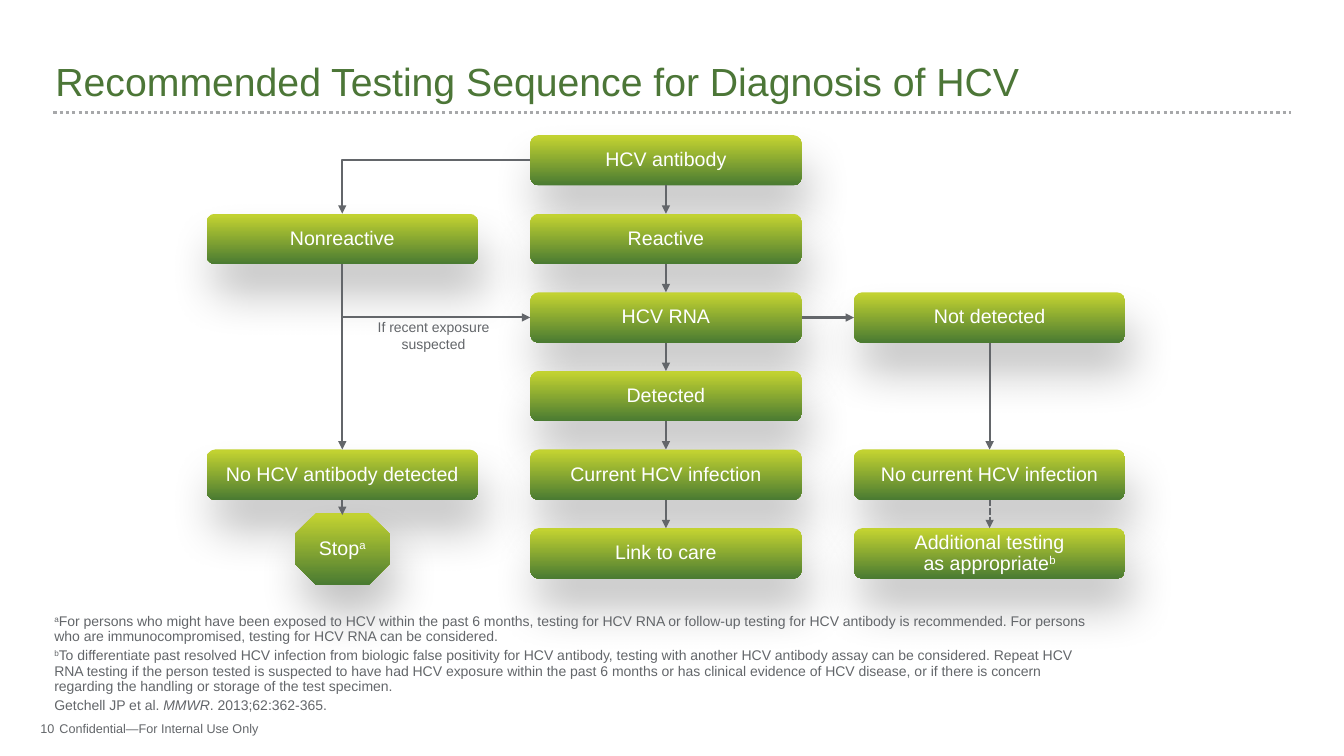
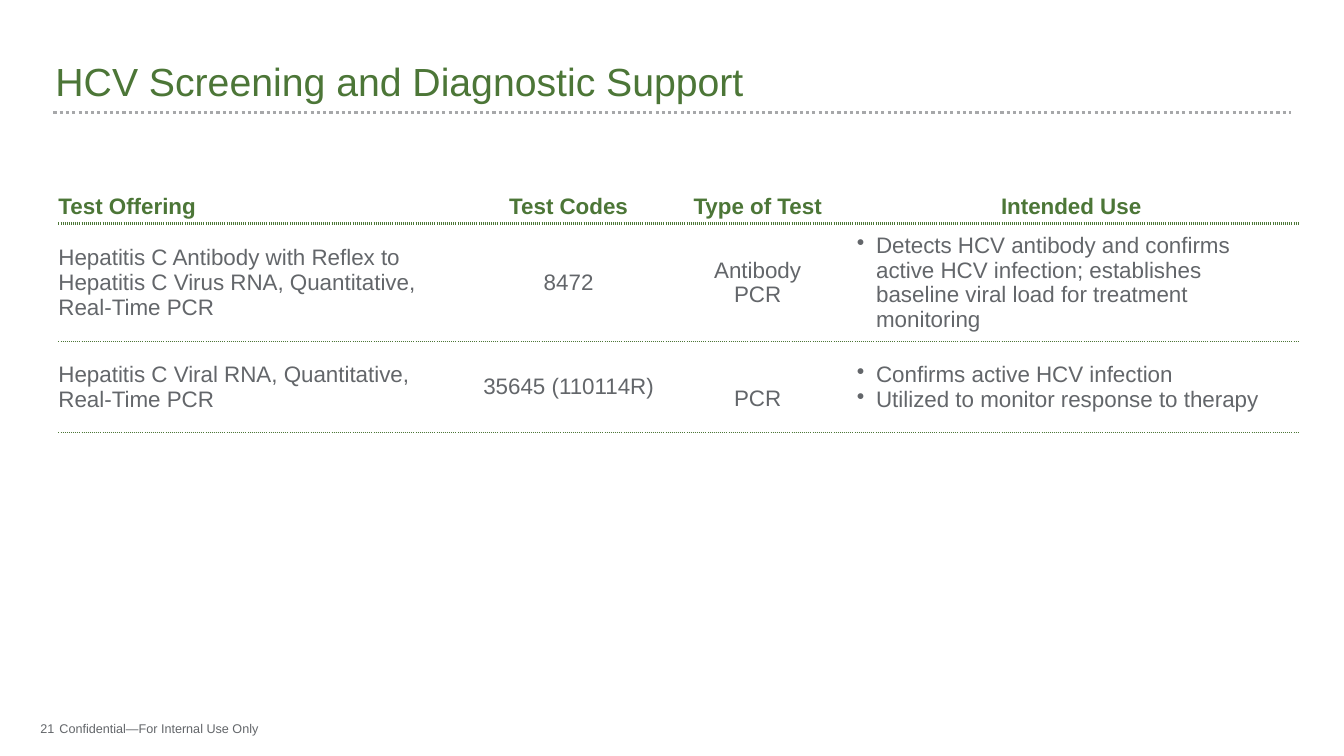
import lxml.etree
import pptx
import pptx.dml.color
import pptx.enum.dml
import pptx.enum.shapes
import pptx.enum.text
import pptx.oxml.ns
import pptx.util

Inches, Pt = pptx.util.Inches, pptx.util.Pt
SHAPE = pptx.enum.shapes.MSO_SHAPE
CONNECTOR = pptx.enum.shapes.MSO_CONNECTOR
DASH = pptx.enum.dml.MSO_LINE
ALIGN = pptx.enum.text.PP_ALIGN
ANCHOR = pptx.enum.text.MSO_ANCHOR
rgb = pptx.dml.color.RGBColor.from_string
qn = pptx.oxml.ns.qn

FONT = "Arial"
GREEN, LIME, LEAF = "4C7637", "C2D231", "4A7B32"
GREY, RULE, WHITE = "63666A", "A7A8AA", "FFFFFF"


def add_runs(p, runs, size, color, bold=False):
    """Fill p from (text, style) pairs; style is "", "sup" or "italic", and a newline breaks the line."""
    for text, style in runs:
        for i, line in enumerate(text.split("\n")):
            if i:
                p.add_line_break()
            r = p.add_run()
            r.text = line
            r.font.name, r.font.size, r.font.bold = FONT, Pt(size), bold
            r.font.color.rgb = rgb(color)
            if style == "italic":
                r.font.italic = True
            elif style == "sup":
                r._r.get_or_add_rPr().set("baseline", "30000")


def add_line(s, kind, ends, color, width, dash=None, arrow=None):
    """Draw a connector between ends; arrow is "headEnd" or "tailEnd"."""
    line = s.shapes.add_connector(kind, *map(Inches, ends))
    line.line.color.rgb = rgb(color)
    line.line.width = Pt(width)
    if dash:
        line.line.dash_style = dash
    if arrow:
        ln = line._element.spPr.find(qn("a:ln"))
        lxml.etree.SubElement(ln, qn("a:" + arrow), type="triangle")
    lxml.etree.SubElement(line._element.spPr, qn("a:effectLst"))
    return line


prs = pptx.Presentation()
prs.slide_width, prs.slide_height = Inches(13.33), Inches(7.5)

# Title, dotted rule and footer of every slide
slides = []
for title, number in [("Recommended Testing Sequence for Diagnosis of HCV", "10"),
                      ("HCV Screening and Diagnostic Support", "21")]:
    s = prs.slides.add_slide(prs.slide_layouts[5])
    slides.append(s)
    sp = s.shapes.title
    sp.left, sp.top, sp.width, sp.height = map(Inches, (0.45, 0.13, 12.43, 0.96))
    tf = sp.text_frame
    tf.auto_size = pptx.enum.text.MSO_AUTO_SIZE.NONE
    tf.word_wrap, tf.vertical_anchor = True, ANCHOR.BOTTOM
    p = tf.paragraphs[0]
    p.alignment, p.line_spacing = ALIGN.LEFT, 0.9
    add_runs(p, [(title, "")], 28, GREEN)
    add_line(s, CONNECTOR.STRAIGHT, (0.53, 1.12, 12.8, 1.12), RULE, 2.25, DASH.ROUND_DOT)
    for left, width, align, text in [(0.07, 0.47, ALIGN.RIGHT, number),
                                     (0.59, 6.96, ALIGN.LEFT, "Confidential—For Internal Use Only")]:
        tf = s.shapes.add_textbox(*map(Inches, (left, 7.15, width, 0.15))).text_frame
        tf.margin_left = tf.margin_right = tf.margin_top = tf.margin_bottom = 0
        tf.word_wrap, tf.vertical_anchor = True, ANCHOR.BOTTOM
        p = tf.paragraphs[0]
        p.alignment, p.line_spacing = align, 0.9
        add_runs(p, [(text, "")], 9, GREY)

# Flowchart: three columns, six rows
s = slides[0]
LEFT, TOP, COL, ROW = 2.05, 1.34, 3.21, 0.78
BOX_W, BOX_H = 2.69, 0.5
STOP_W, STOP_H, STOP_TOP = 0.94, 0.71, 5.09
steps = {
    (1, 0): [("HCV antibody", "")],
    (0, 1): [("Nonreactive", "")],
    (1, 1): [("Reactive", "")],
    (1, 2): [("HCV RNA", "")],
    (2, 2): [("Not detected", "")],
    (1, 3): [("Detected", "")],
    (0, 4): [("No HCV antibody detected", "")],
    (1, 4): [("Current HCV infection", "")],
    (2, 4): [("No current HCV infection", "")],
    (2, 5): [("Additional testing\nas appropriate", ""), ("b", "sup")],
    (1, 5): [("Link to care", "")],
    "stop": [("Stop", ""), ("a", "sup")],
}
nodes = {}
for key, runs in steps.items():
    if key == "stop":
        kind = SHAPE.OCTAGON
        place = (LEFT + (BOX_W - STOP_W) / 2, STOP_TOP, STOP_W, STOP_H)
    else:
        kind = SHAPE.ROUNDED_RECTANGLE
        place = (LEFT + key[0] * COL, TOP + key[1] * ROW, BOX_W, BOX_H)
    sp = nodes[key] = s.shapes.add_shape(kind, *map(Inches, place))
    sp.fill.gradient()
    sp.fill.gradient_angle = 270
    for stop, position, color in zip(sp.fill.gradient_stops, (0.03, 1), (LIME, LEAF)):
        stop.position, stop.color.rgb = position, rgb(color)
    sp.line.fill.background()
    sp.shadow.inherit = False
    shadow = lxml.etree.SubElement(
        sp._element.spPr.find(qn("a:effectLst")), qn("a:outerShdw"), blurRad=str(Pt(33)),
        dist=str(Pt(22)), dir=str(77 * 60000), algn="ctr", rotWithShape="0")
    black = lxml.etree.SubElement(shadow, qn("a:srgbClr"), val="000000")
    lxml.etree.SubElement(black, qn("a:alpha"), val="23000")
    tf = sp.text_frame
    tf.word_wrap, tf.vertical_anchor = True, ANCHOR.MIDDLE
    if key == "stop":
        tf.margin_left = tf.margin_right = 0
    p = tf.paragraphs[0]
    p.alignment, p.line_spacing = ALIGN.CENTER, 0.9
    add_runs(p, runs, 14, WHITE)

# Arrows join numbered sides of the boxes
UP, WEST, DOWN, EAST = range(4)
down_arrows = [((1, row), (1, row + 1)) for row in range(5)]
down_arrows += [((0, 1), (0, 4)), ((2, 2), (2, 4)), ((2, 4), (2, 5))]
arrows = [(a, DOWN, b, UP, "tailEnd") for a, b in down_arrows]
arrows += [
    ((1, 2), EAST, (2, 2), WEST, "tailEnd"),
    ((1, 0), WEST, (0, 1), UP, "tailEnd"),
    ((1, 2), WEST, (0, 1), DOWN, "headEnd"),
]
for start, start_side, end, end_side, arrow in arrows:
    bent = start_side == WEST
    dash = DASH.SQUARE_DOT if end == (2, 5) else None
    line = add_line(s, CONNECTOR.ELBOW if bent else CONNECTOR.STRAIGHT, (0, 0, 0, 0),
                    GREY, 1.5, dash, arrow)
    line.begin_connect(nodes[start], start_side)
    line.end_connect(nodes[end], end_side)
    if bent:
        line._element.spPr.find(qn("a:prstGeom")).set("prst", "bentConnector2")
center = LEFT + BOX_W / 2
add_line(s, CONNECTOR.STRAIGHT, (center, TOP + 4 * ROW + BOX_H, center, STOP_TOP + 0.02),
         GREY, 1.5, arrow="tailEnd")

# Arrow caption and footnotes
caption = [[("If recent exposure", "")], [("suspected", "")]]
footnotes = [
    [("a", "sup"),
     ("For persons who might have been exposed to HCV within the past 6 months, testing for HCV RNA "
      "or follow-up testing for HCV antibody is recommended. For persons who are immunocompromised, "
      "testing for HCV RNA can be considered.", "")],
    [("b", "sup"),
     ("To differentiate past resolved HCV infection from biologic false positivity for HCV antibody, "
      "testing with another HCV antibody assay can be considered. Repeat HCV RNA testing if the person "
      "tested is suspected to have had HCV exposure within the past 6 months or has clinical evidence "
      "of HCV disease, or if there is concern regarding the handling or storage of the test specimen.",
      "")],
    [("Getchell JP et al. ", ""), ("MMWR", "italic"), (". 2013;62:362-365.", "")],
]
for place, margins, align, spacing, gap, paragraphs in [
        ((3.38, 3.1, 1.84, 0.44), (0.1, 0.1, 0.05), ALIGN.CENTER, 1, 0, caption),
        ((0.44, 6.08, 10.49, 1), (0.1, 0, 0), ALIGN.LEFT, 0.9, 3, footnotes)]:
    tf = s.shapes.add_textbox(*map(Inches, place)).text_frame
    tf.word_wrap, tf.vertical_anchor = True, ANCHOR.BOTTOM
    tf.margin_left, tf.margin_right, tf.margin_bottom = map(Inches, margins)
    tf.margin_top = tf.margin_bottom
    for i, runs in enumerate(paragraphs):
        p = tf.add_paragraph() if i else tf.paragraphs[0]
        p.alignment, p.line_spacing = align, spacing
        if i:
            p.space_before = Pt(gap)
        add_runs(p, runs, 10, GREY)

# Table of tests: each cell is a list of paragraphs
s = slides[1]
rows = [
    [["Test Offering"], ["Test Codes"], ["Type of Test"], ["Intended Use"]],
    [["Hepatitis C Antibody with Reflex to Hepatitis C Virus RNA, Quantitative,\nReal-Time PCR"],
     ["8472"], ["Antibody", "PCR"],
     ["Detects HCV antibody and confirms active HCV infection; establishes baseline viral load "
      "for treatment monitoring"]],
    [["Hepatitis C Viral RNA, Quantitative, Real-Time PCR"], ["35645 (110114R)"], ["PCR"],
     ["Confirms active HCV infection", "Utilized to monitor response to therapy"]],
]
col_widths, row_heights = (4.04, 2.04, 1.71, 4.51), (0.63, 1.17, 0.9)
table = s.shapes.add_table(len(rows), len(col_widths), Inches(0.58), Inches(1.59),
                           Inches(sum(col_widths)), Inches(sum(row_heights))).table
table.horz_banding = False
NO_STYLE = "{2D5ABB26-0587-4C30-8999-92F81FD0307C}"
table._tbl.tblPr.find(qn("a:tableStyleId")).text = NO_STYLE
for col, width in zip(table.columns, col_widths):
    col.width = Inches(width)
for i, (row, height) in enumerate(zip(rows, row_heights)):
    table.rows[i].height = Inches(height)
    header = i == 0
    for j, paragraphs in enumerate(row):
        cell = table.cell(i, j)
        cell.fill.background()
        cell.vertical_anchor = ANCHOR.BOTTOM if header else ANCHOR.MIDDLE
        cell.margin_left, cell.margin_right = Inches(0.13 if j else 0), Inches(0.13)
        if (i, j) == (2, 2):
            cell.margin_top = Inches(0.29)  # sets the entry level with the second line beside it
        border = lxml.etree.Element(qn("a:lnB"), w=str(Pt(2.25 if header else 1)))
        fill = lxml.etree.SubElement(border, qn("a:solidFill"))
        lxml.etree.SubElement(fill, qn("a:srgbClr"), val=GREEN)
        lxml.etree.SubElement(border, qn("a:prstDash"), val="sysDot" if header else "dot")
        cell._tc.get_or_add_tcPr().insert(0, border)
        bulleted = j == 3 and not header
        for k, text in enumerate(paragraphs):
            p = cell.text_frame.add_paragraph() if k else cell.text_frame.paragraphs[0]
            p.alignment = ALIGN.LEFT if j == 0 or bulleted else ALIGN.CENTER
            if bulleted:
                pPr = p._p.get_or_add_pPr()
                pPr.set("marL", str(Inches(0.19)))
                pPr.set("indent", str(-Inches(0.19)))
                lxml.etree.SubElement(pPr, qn("a:buChar"), char="•")
            add_runs(p, [(text, "")], 16, GREEN if header else GREY, header)

prs.save("out.pptx")
